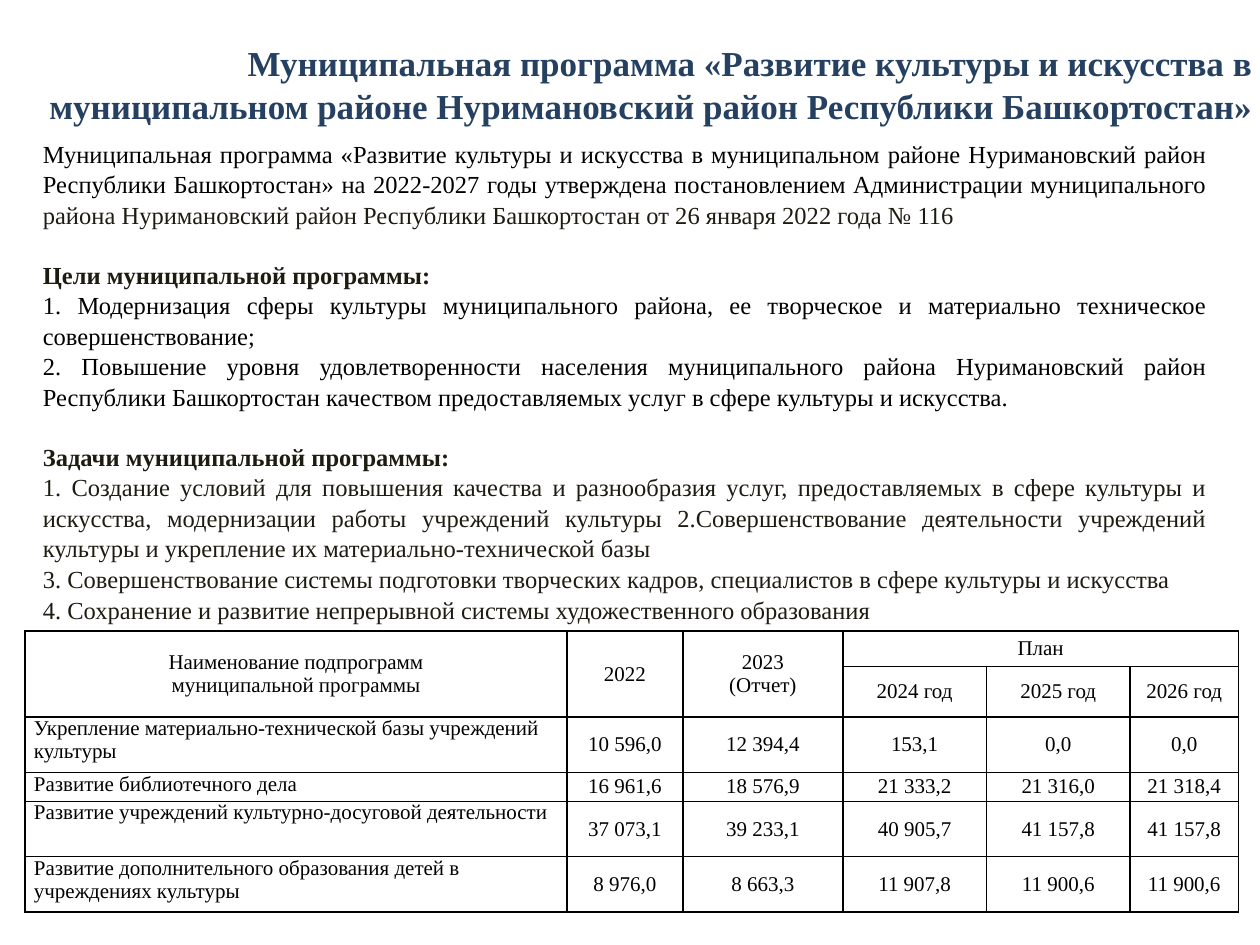
"""Build the slide on the municipal culture and arts programme."""
from dataclasses import dataclass
from lxml import etree
from pptx import Presentation
from pptx.dml.color import RGBColor
from pptx.enum.text import MSO_ANCHOR, MSO_AUTO_SIZE, PP_ALIGN
from pptx.oxml import parse_xml
from pptx.oxml.ns import nsdecls, qn
from pptx.util import Inches, Pt

LEFT, CENTER, RIGHT, JUSTIFY = PP_ALIGN.LEFT, PP_ALIGN.CENTER, PP_ALIGN.RIGHT, PP_ALIGN.JUSTIFY
TOP, MIDDLE = MSO_ANCHOR.TOP, MSO_ANCHOR.MIDDLE
NO_FIT = MSO_AUTO_SIZE.NONE


@dataclass(frozen=True)
class Theme:
    font: str = "Times New Roman"
    navy: str = "254061"
    black: str = "000000"
    olive: str = "1E1C11"
    title: int = 20
    body: int = 14
    cell: int = 12
    spacing: float = 1.04
    gap: float = 16.8


T = Theme()
UNIT = 0.04
TITLE_BOX = (5, 7, 246, 19)
BODY_BOX = (6, 26, 236, 103)
TABLE_AT = (5, 125.25)
COLS = [107.5, 23, 31.75, 28.5, 28.5, 21.5]
ROWS = [7, 10, 11, 5.75, 11, 11]
MERGES = [(0, 0, 1, 0), (0, 1, 1, 1), (0, 2, 1, 2), (0, 3, 0, 5)]

TITLE = ("Муниципальная программа «Развитие культуры и искусства в муниципальном районе "
         "Нуримановский район Республики Башкортостан»")
INTRO = [
    ("Муниципальная программа «Развитие культуры и искусства в муниципальном районе "
     "Нуримановский район Республики Башкортостан» на 2022-2027 годы утверждена "
     "постановлением Администрации муниципального ", T.black),
    ("района Нуримановский район Республики Башкортостан от 26 января 2022 года № 116", T.olive),
]
SECTIONS = [
    ("Цели муниципальной программы:", T.black, [
        "1. Модернизация сферы культуры муниципального района, ее творческое и материально "
        "техническое совершенствование;",
        "2. Повышение уровня удовлетворенности населения муниципального района Нуримановский "
        "район Республики Башкортостан качеством предоставляемых услуг в сфере культуры и "
        "искусства.",
    ]),
    ("Задачи муниципальной программы:", T.olive, [
        "1. Создание условий для повышения качества и разнообразия услуг, предоставляемых в "
        "сфере культуры и искусства, модернизации работы учреждений культуры "
        "2.Совершенствование деятельности учреждений культуры и укрепление их "
        "материально-технической базы",
        "3. Совершенствование системы подготовки творческих кадров, специалистов в сфере "
        "культуры и искусства",
        "4. Сохранение и развитие непрерывной системы художественного образования",
    ]),
]
HEADER = [
    ["Наименование подпрограмм\nмуниципальной программы", "2022", "2023\n(Отчет)", "План", "", ""],
    ["", "", "", "2024 год", "2025 год", "2026 год"],
]
DATA = [
    ["Укрепление материально-технической базы учреждений культуры",
     "10 596,0", "12 394,4", "153,1", "0,0", "0,0"],
    ["Развитие библиотечного дела",
     "16 961,6", "18 576,9", "21 333,2", "21 316,0", "21 318,4"],
    ["Развитие учреждений культурно-досуговой деятельности",
     "37 073,1", "39 233,1", "40 905,7", "41 157,8", "41 157,8"],
    ["Развитие дополнительного образования детей в учреждениях культуры",
     "8 976,0", "8 663,3", "11 907,8", "11 900,6", "11 900,6"],
]


def grid(*cells):
    return [Inches(c * UNIT) for c in cells]


def add_run(p, text, size, color, bold=False):
    r = p.add_run()
    r.text = text
    f = r.font
    f.size, f.bold, f.name = Pt(size), bold, T.font
    f.color.rgb = RGBColor.from_string(color)
    return r


def place(sp, box, anchor):
    sp.left, sp.top, sp.width, sp.height = grid(*box)
    tf = sp.text_frame
    tf.word_wrap, tf.auto_size, tf.vertical_anchor = True, NO_FIT, anchor
    return tf


def add_title(s):
    p = place(s.shapes.title, TITLE_BOX, MIDDLE).paragraphs[0]
    p.alignment, p.line_spacing = RIGHT, T.spacing
    r = add_run(p, TITLE, T.title, T.navy, True)
    shadow = parse_xml(
        f'<a:effectLst {nsdecls("a")}><a:outerShdw blurRad="38100" dist="38100" dir="2700000">'
        '<a:srgbClr val="000000"><a:alpha val="43000"/></a:srgbClr></a:outerShdw></a:effectLst>')
    r.font.fill.solid()
    r.font.color.rgb = RGBColor.from_string(T.navy)
    r.font._element.find(qn("a:solidFill")).addnext(shadow)


def add_body(s):
    tf = place(s.placeholders[1], BODY_BOX, TOP)
    paras = [(INTRO, False, 0)]
    for heading, color, items in SECTIONS:
        paras.append(([(heading, T.olive)], True, T.gap))
        paras += [([(item, color)], False, 0) for item in items]
    for i, (runs, bold, gap) in enumerate(paras):
        p = tf.add_paragraph() if i else tf.paragraphs[0]
        p.alignment, p.line_spacing, p.space_before = JUSTIFY, T.spacing, Pt(gap)
        pPr = p._p.get_or_add_pPr()
        pPr.set("marL", "0")
        pPr.set("indent", "0")
        etree.SubElement(pPr, qn("a:buNone"))
        for text, color in runs:
            add_run(p, text, T.body, color, bold)


def add_borders(cell):
    tcPr = cell._tc.get_or_add_tcPr()
    for side in "LRTB":
        tcPr.append(parse_xml(
            f'<a:ln{side} {nsdecls("a")} w="12700"><a:solidFill><a:srgbClr val="{T.black}"/>'
            f'</a:solidFill></a:ln{side}>'))
    cell.fill.background()


def fill_cell(cell, text, is_name, inset):
    cell.margin_left = cell.margin_right = Inches(inset)
    cell.margin_top = cell.margin_bottom = 0
    cell.vertical_anchor = TOP if is_name else MIDDLE
    add_borders(cell)
    tf = cell.text_frame
    for i, line in enumerate(text.split("\n") if text else []):
        p = tf.add_paragraph() if i else tf.paragraphs[0]
        p.alignment = LEFT if is_name else CENTER
        add_run(p, line, T.cell, T.black)


def add_budget_table(s):
    rows = HEADER + DATA
    size = grid(sum(COLS), sum(ROWS))
    table = s.shapes.add_table(len(rows), len(COLS), *grid(*TABLE_AT), *size).table
    table.first_row = table.horz_banding = False
    for col, width in zip(table.columns, grid(*COLS)):
        col.width = width
    for row, height in zip(table.rows, grid(*ROWS)):
        row.height = height
    for i, values in enumerate(rows):
        in_data = i >= len(HEADER)
        for j, text in enumerate(values):
            inset = 0.01 if in_data and j > 2 else 0.07
            fill_cell(table.cell(i, j), text, in_data and j == 0, inset)
    for top, left, bottom, right in MERGES:
        table.cell(top, left).merge(table.cell(bottom, right))


def main():
    prs = Presentation()
    prs.slide_width, prs.slide_height = Inches(10), Inches(7.5)
    s = prs.slides.add_slide(prs.slide_layouts[1])
    add_title(s)
    add_body(s)
    add_budget_table(s)
    prs.save("out.pptx")


if __name__ == "__main__":
    main()
